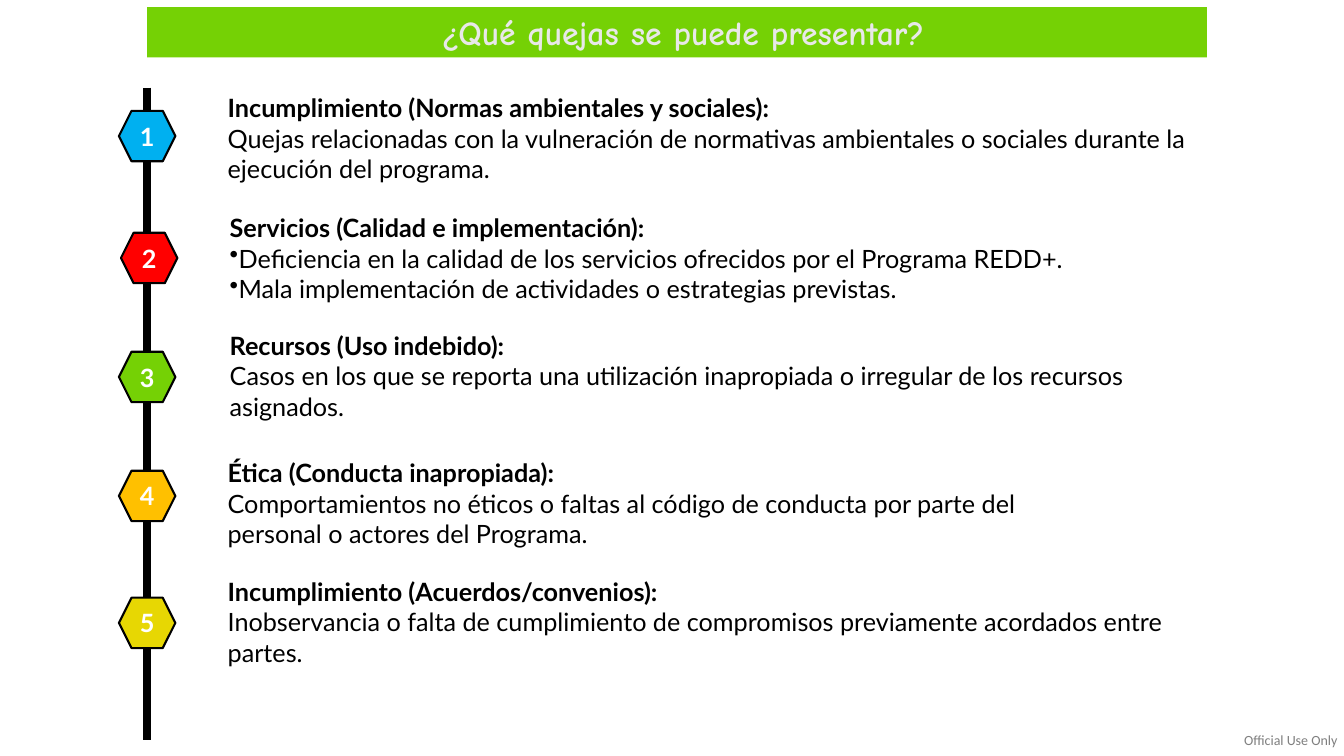
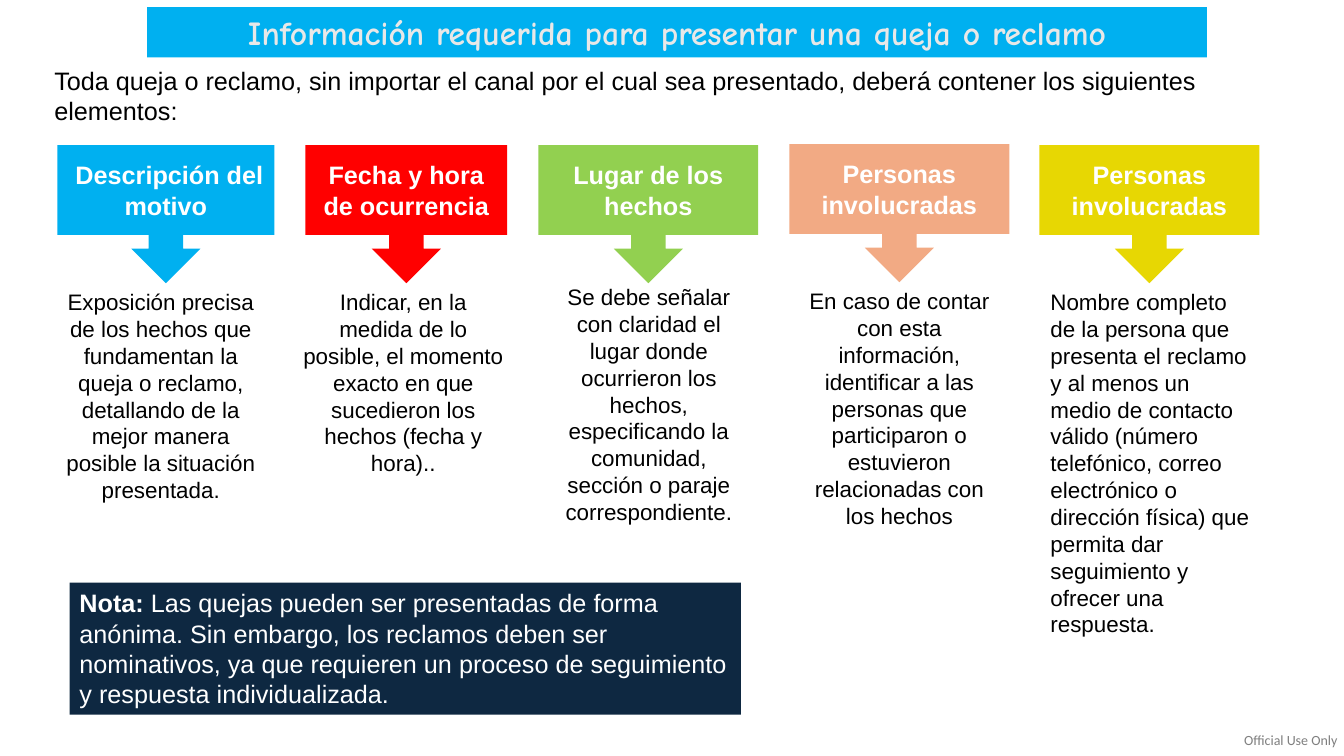
from lxml import etree
from pptx import Presentation
from pptx import util as u
from pptx.dml import color
from pptx.enum import shapes, text
from pptx.oxml import ns

PX = 9144
COLORS = {
    "white": "FFFFFF", "black": "000000", "footer": "7F7F7F", "title": "E8E8E8",
    "blue": "00B0F0", "red": "FF0000", "green": "75D105", "amber": "FFC000",
    "yellow": "E7D703", "lime": "92D050", "peach": "F2AA84", "navy": "0E2841",
}
LEFT, CENTER = text.PP_ALIGN.LEFT, text.PP_ALIGN.CENTER
TOP, MIDDLE = text.MSO_ANCHOR.TOP, text.MSO_ANCHOR.MIDDLE

COMPLAINTS = [
    ("blue", 118, 110, (216, 87, 1000, 101), "Incumplimiento (Normas ambientales y sociales):",
     ["Quejas relacionadas con la vulneración de normativas ambientales o sociales durante la "
      "ejecución del programa."]),
    ("red", 120, 231, (218, 206, 978, 101), "Servicios (Calidad e implementación):",
     ["Deficiencia en la calidad de los servicios ofrecidos por el Programa REDD+.",
      "Mala implementación de actividades o estrategias previstas."]),
    ("green", 118, 349, (218, 323, 970, 101), "Recursos (Uso indebido):",
     ["Casos en los que se reporta una utilización inapropiada o irregular de los recursos "
      "asignados."]),
    ("amber", 118, 467, (216, 449, 893, 101), "Ética (Conducta inapropiada):",
     ["Comportamientos no éticos o faltas al código de conducta por parte del personal o "
      "actores del Programa."]),
    ("yellow", 118, 593, (216, 567, 972, 101), "Incumplimiento (Acuerdos/convenios):",
     ["Inobservancia o falta de cumplimiento de compromisos previamente acordados entre "
      "partes."]),
]

REQUIREMENTS = [
    ("blue", (57, 144, 215, 137), " Descripción del motivo", (46, 281, 227, 226), CENTER,
     "Exposición precisa de los hechos que fundamentan la queja o reclamo, detallando de la "
     "mejor manera posible la situación presentada."),
    ("red", (303, 144, 200, 137), "Fecha y hora de ocurrencia", (290, 281, 220, 199), CENTER,
     "Indicar, en la medida de lo posible, el momento exacto en que sucedieron los hechos "
     "(fecha y hora).."),
    ("lime", (534, 144, 218, 137), "Lugar de los hechos", (536, 276, 215, 252), CENTER,
     "Se debe señalar con claridad el lugar donde ocurrieron los hechos, especificando la "
     "comunidad, sección o paraje correspondiente."),
    ("peach", (783, 143, 218, 137), "Personas involucradas", (783, 280, 218, 252), CENTER,
     "En caso de contar con esta información, identificar a las personas que participaron o "
     "estuvieron relacionadas con los hechos"),
    ("yellow", (1031, 144, 218, 137), "Personas involucradas", (1032, 281, 218, 360), LEFT,
     "Nombre completo de la persona que presenta el reclamo y al menos un medio de contacto "
     "válido (número telefónico, correo electrónico o dirección física) que permita dar "
     "seguimiento y ofrecer una respuesta."),
]


def rgb(name):
    """Return the named colour."""
    return color.RGBColor.from_string(COLORS[name])


def emu(lengths):
    """Turn px lengths into EMU."""
    return [u.Emu(length * PX) for length in lengths]


class Slides:
    """Hold the deck, its style and the current page."""

    def __init__(self):
        self.deck = Presentation()
        self.deck.slide_width, self.deck.slide_height = emu((1333, 750))
        self.page = None

    def start(self, title, fill):
        """Add a page with its title band and footer."""
        self.page = self.deck.slides.add_slide(self.deck.slide_layouts[5])
        band = self.page.shapes.title
        band.left, band.top, band.width, band.height = emu((146, 7, 1051, 50))
        band.fill.solid()
        band.fill.fore_color.rgb = rgb(fill)
        self.add_words(band, [[(title, True)]], 24, "Comic Neue", "title", CENTER)
        footer = self.add_text((1234, 726, 96, 17), [[("Official Use Only", False)]],
                               10, "Calibri", "footer")
        frame = footer.text_frame
        frame.margin_left = frame.margin_right = frame.margin_top = frame.margin_bottom = 0
        frame.word_wrap = False

    def add_words(self, box, paras, size, font, ink="black", align=LEFT, anchor=TOP,
                  bullets=False):
        """Fill a box with paragraphs of (words, bold) runs."""
        frame = box.text_frame
        frame.word_wrap = True
        frame.auto_size = text.MSO_AUTO_SIZE.NONE
        frame.vertical_anchor = anchor
        for index, runs in enumerate(paras):
            para = frame.paragraphs[0] if index == 0 else frame.add_paragraph()
            para.alignment = align
            if bullets and index:
                bullet = etree.SubElement(para._p.get_or_add_pPr(), ns.qn("a:buChar"))
                bullet.set("char", "•")
            for words, bold in runs:
                span = para.add_run()
                span.text = words
                span.font.size = u.Pt(size)
                span.font.name = font
                span.font.bold = bold
                span.font.color.rgb = rgb(ink)

    def add_text(self, place, paras, size, font, ink="black", align=LEFT, bullets=False):
        """Add a text box."""
        box = self.page.shapes.add_textbox(*emu(place))
        self.add_words(box, paras, size, font, ink, align, bullets=bullets)
        return box

    def add_shape(self, kind, place, fill, paras, font, align=CENTER, anchor=MIDDLE,
                  outline=None):
        """Add a filled shape with white text."""
        box = self.page.shapes.add_shape(kind, *emu(place))
        box.shadow.inherit = False
        box.fill.solid()
        box.fill.fore_color.rgb = rgb(fill)
        if outline:
            box.line.color.rgb = rgb("black")
            box.line.width = u.Pt(outline)
        else:
            box.line.fill.background()
        self.add_words(box, paras, 18, font, "white", align, anchor)

    def add_line(self, ends, width):
        """Add a straight black line."""
        line = self.page.shapes.add_connector(shapes.MSO_CONNECTOR.STRAIGHT, *emu(ends))
        line.line.color.rgb = rgb("black")
        line.line.width = u.Pt(width)
        etree.SubElement(line.element.spPr, ns.qn("a:effectLst"))


def complaints(slides):
    """Build the timeline of complaint types."""
    slides.start(" ¿Qué quejas se puede presentar?", "green")
    slides.add_line((146, 87, 146, 734), 6)
    for number, (fill, left, top, place, heading, details) in enumerate(COMPLAINTS, 1):
        slides.add_shape(shapes.MSO_SHAPE.HEXAGON, (left, top, 56, 50), fill,
                         [[(str(number), True)]], "Lato", outline=1.5)
        paras = [[(heading, True)]] + [[(detail, False)] for detail in details]
        slides.add_text(place, paras, 18, "Lato", bullets=len(details) > 1)


def requirements(slides):
    """Build the columns of required information."""
    slides.start("Información requerida para presentar una queja o reclamo", "blue")
    slides.add_text((44, 60, 1204, 71), [[(
        "Toda queja o reclamo, sin importar el canal por el cual sea presentado, deberá "
        "contener los siguientes elementos:", False)]], 18, "Arial")
    for fill, callout, heading, place, align, detail in REQUIREMENTS:
        slides.add_shape(shapes.MSO_SHAPE.DOWN_ARROW_CALLOUT, callout, fill,
                         [[(heading, True)]], "Arial")
        slides.add_text(place, [[(detail, False)]], 16, "Arial", align=align)
    note = [("Nota:", True), (
        " Las quejas pueden ser presentadas de forma anónima. Sin embargo, los reclamos deben "
        "ser nominativos, ya que requieren un proceso de seguimiento y respuesta "
        "individualizada.", False)]
    slides.add_shape(shapes.MSO_SHAPE.RECTANGLE, (69, 578, 666, 131), "navy", [note], "Arial",
                     LEFT, TOP)


def main():
    """Build and save the deck."""
    slides = Slides()
    complaints(slides)
    requirements(slides)
    slides.deck.save("out.pptx")


if __name__ == "__main__":
    main()
